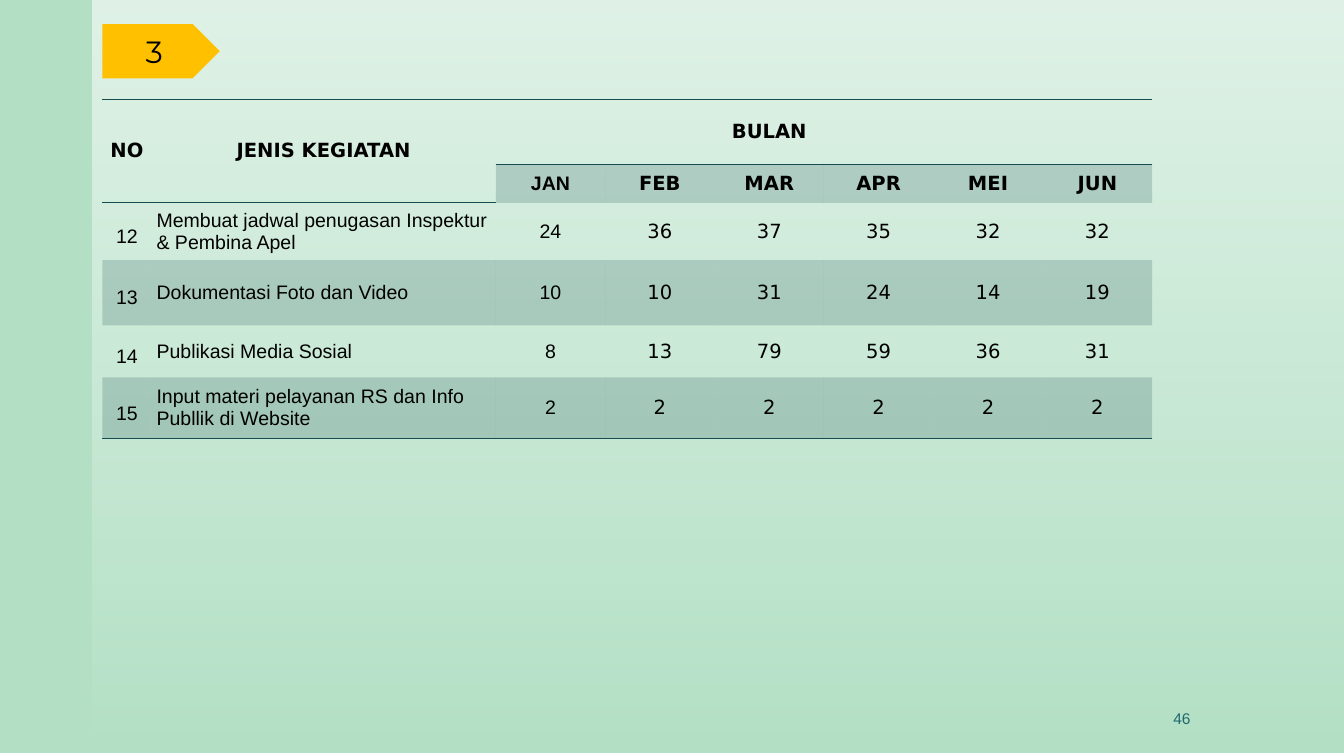
import pptx
import pptx.util
import pptx.oxml
import pptx.oxml.ns
import pptx.dml.color
import pptx.enum.shapes
import pptx.enum.text

PX = 9144  # 100 px to the inch
COLORS = {"mint": "B3E0C5", "white": "FFFFFF", "teal": "164B4F",
          "number": "1F696F", "amber": "FFC000", "black": "000000"}
SHAPE = pptx.enum.shapes.MSO_SHAPE
ALIGN = pptx.enum.text.PP_ALIGN
MIDDLE = pptx.enum.text.MSO_ANCHOR.MIDDLE
qn = pptx.oxml.ns.qn


def rgb(name):
    return pptx.dml.color.RGBColor.from_string(COLORS[name])


def write(frame, text, size, font, color, align, bold=False):
    frame.text = text
    para = frame.paragraphs[0]
    para.alignment = align
    face = para.runs[0].font
    face.size, face.name, face.bold = pptx.util.Pt(size), font, bold
    face.color.rgb = rgb(color)
    return para


deck = pptx.Presentation()
deck.slide_width, deck.slide_height = 1339 * PX, 750 * PX
slide = deck.slides.add_slide(deck.slide_layouts[6])
slide.background.fill.solid()
slide.background.fill.fore_color.rgb = rgb("mint")

# Pale panel, fading out downwards
panel = slide.shapes.add_shape(SHAPE.RECTANGLE, 92 * PX, 0, 1247 * PX, 750 * PX)
panel.shadow.inherit = False
panel.line.fill.background()
panel.fill.gradient()
panel.fill.gradient_angle = 270
for stop, place, alpha in zip(panel.fill.gradient_stops, (0, 1), (60, 0)):
    stop.position = place
    stop.color.rgb = rgb("white")
for tint, alpha in zip(panel._element.spPr.iter(qn("a:srgbClr")), (60, 0)):
    tint.makeelement
    pptx.oxml.ns  # namespace helper
    tint.append(tint.makeelement(qn("a:alpha"), {"val": str(alpha * 1000)}))

# Slide number
number = slide.shapes.add_textbox(884 * PX, 695 * PX, 312 * PX, 40 * PX)
number.text_frame.word_wrap = True
number.text_frame.vertical_anchor = MIDDLE
write(number.text_frame, "46", 11.1, "Arial", "number", ALIGN.RIGHT)

# Activity table
rows = [
    ["NO", "JENIS KEGIATAN", "BULAN", "", "", "", "", ""],
    ["", "", "JAN", "FEB", "MAR", "APR", "MEI", "JUN"],
    ["12", "Membuat jadwal penugasan Inspektur & Pembina Apel",
     "24", "36", "37", "35", "32", "32"],
    ["13", "Dokumentasi Foto dan Video", "10", "10", "31", "24", "14", "19"],
    ["14", "Publikasi Media Sosial", "8", "13", "79", "59", "36", "31"],
    ["15", "Input materi pelayanan RS dan Info Publlik di Website",
     "2", "2", "2", "2", "2", "2"],
]
widths = [49, 343] + [109] * 6
heights = [65, 38, 57, 65, 52, 61]
table = slide.shapes.add_table(len(rows), len(widths), 102 * PX, 99 * PX,
                               sum(widths) * PX, sum(heights) * PX).table
table.first_row = table.horz_banding = False
style = table._tbl.tblPr.find(qn("a:tableStyleId"))
style.text = "{2D5ABB26-0587-4C30-8999-92F81FD0307C}"  # no style, no grid
for col, width in zip(table.columns, widths):
    col.width = width * PX
for row, height in zip(table.rows, heights):
    row.height = height * PX

for r, row in enumerate(rows):
    for c, text in enumerate(row):
        cell = table.cell(r, c)
        cell.vertical_anchor = MIDDLE
        cell.margin_left = cell.margin_right = 5 * PX
        cell.margin_top = cell.margin_bottom = 5 * PX
        head = r < 2
        if text:
            sans = c > 2 or (head and text != "JAN")
            left = c == 1 and not head
            para = write(cell.text_frame, text, 14,
                         "DejaVu Sans" if sans else "Arial", "black",
                         ALIGN.LEFT if left else ALIGN.CENTER, head)
            if c == 0 and not head:
                para.line_spacing = 1.5

        # Shade every other row, but not the merged headings
        props = cell._tc.get_or_add_tcPr()
        if r % 2 and (c > 1 or not head):
            cell.fill.solid()
            cell.fill.fore_color.rgb = rgb("teal")
            tint = props.find(".//" + qn("a:srgbClr"))
            tint.append(tint.makeelement(qn("a:alpha"), {"val": "20000"}))
        else:
            cell.fill.background()

        # Rules above and below the headings and under the last row
        sides = []
        if r == 0:
            sides = ["T", "B"]
        elif r == len(rows) - 1 or (r == 1 and c < 2):
            sides = ["B"]
        for spot, side in enumerate(sides):
            props.insert(spot, pptx.oxml.parse_xml(
                f'<a:ln{side} {pptx.oxml.ns.nsdecls("a")} w="12700"><a:solidFill>'
                f'<a:srgbClr val="{COLORS["teal"]}"/></a:solidFill></a:ln{side}>'))

for c in (0, 1):
    table.cell(0, c).merge(table.cell(1, c))
table.cell(0, 2).merge(table.cell(0, 6))

# Section tag
tag = slide.shapes.add_shape(SHAPE.PENTAGON, 102 * PX, 24 * PX, 117 * PX, 54 * PX)
tag.shadow.inherit = False
tag.fill.solid()
tag.fill.fore_color.rgb = rgb("amber")
tag.line.fill.background()
tag.text_frame.vertical_anchor = MIDDLE
write(tag.text_frame, "3", 22, "Montserrat", "black", ALIGN.CENTER)

deck.save("out.pptx")
